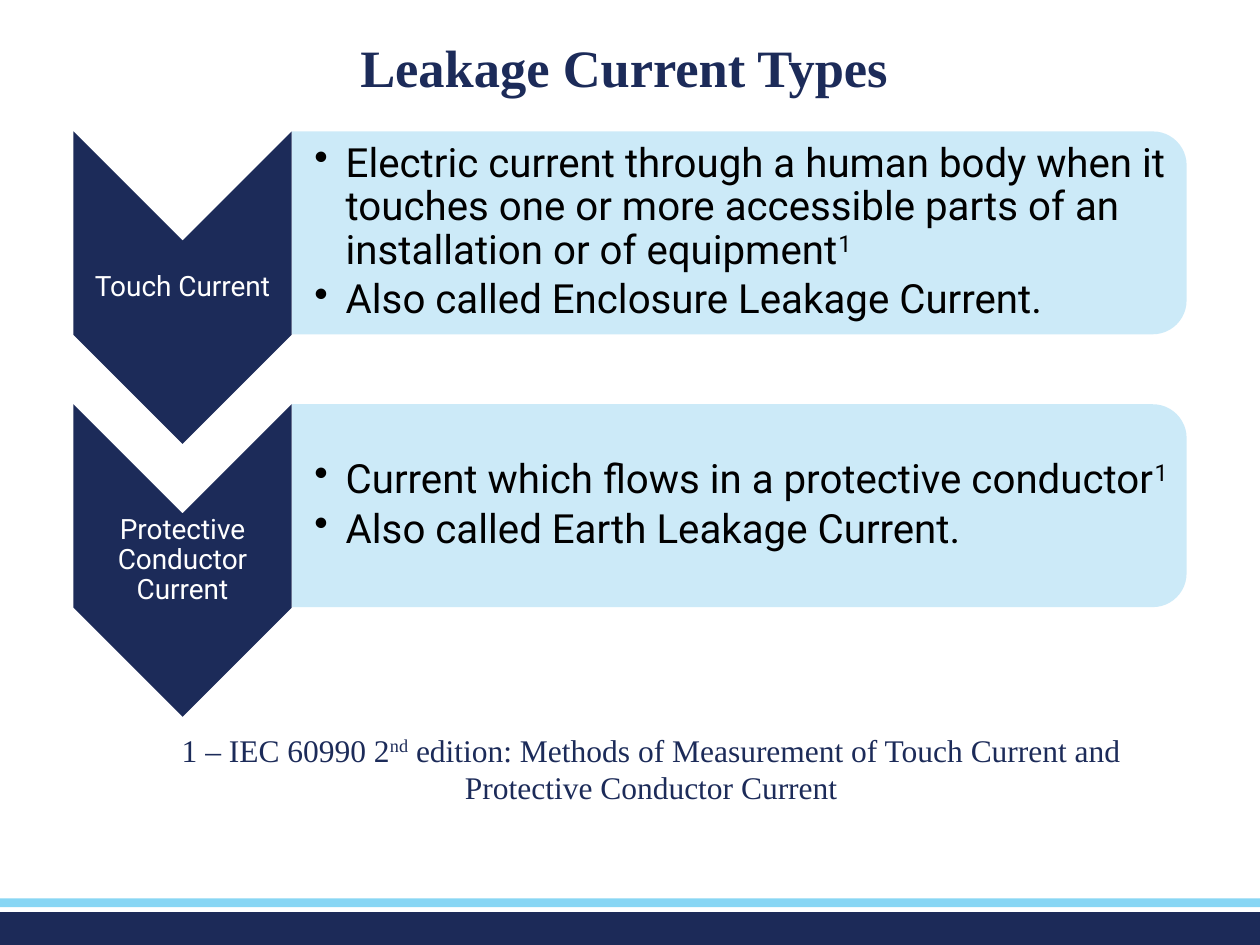
from pptx import Presentation
from pptx.dml.color import RGBColor
from pptx.enum.shapes import MSO_SHAPE
from pptx.enum.text import MSO_ANCHOR, PP_ALIGN
from pptx.util import Cm, Pt
from lxml import etree

RECT = MSO_SHAPE.RECTANGLE
CHEVRON = MSO_SHAPE.CHEVRON
PANEL = MSO_SHAPE.ROUND_2_SAME_RECTANGLE
TOP, MIDDLE, BOTTOM = MSO_ANCHOR.TOP, MSO_ANCHOR.MIDDLE, MSO_ANCHOR.BOTTOM
CENTER = PP_ALIGN.CENTER
NS = "{http://schemas.openxmlformats.org/drawingml/2006/main}"
SERIF, SANS = "Times New Roman", "Roboto"
COLORS = {"bar": "1C2A58", "sky": "88D6F4", "navy": "1C2B59",
          "pale": "C7E8F8", "white": "FFFFFF", "black": "000000"}

deck = Presentation()
deck.slide_width, deck.slide_height = Cm(25.4), Cm(19.05)
slide = deck.slides.add_slide(deck.slide_layouts[6])


def add_shape(kind, left, top, width, height, color, turn=0):
    shape = slide.shapes.add_shape(kind, Cm(left), Cm(top), Cm(width), Cm(height))
    shape.rotation = turn
    shape.shadow.inherit = False
    shape.fill.solid()
    shape.fill.fore_color.rgb = RGBColor.from_string(COLORS[color])
    shape.line.fill.background()
    return shape


def add_text(lines, left, top, width, height, font, size, color,
             anchor=MIDDLE, insets=(0, 0, 0, 0), bold=False,
             bullet=False, spacing=1, after=0):
    """Write one paragraph per line; parts between ^ marks are superscript."""
    box = slide.shapes.add_textbox(Cm(left), Cm(top), Cm(width), Cm(height))
    frame = box.text_frame
    frame.word_wrap = True
    frame.vertical_anchor = anchor
    (frame.margin_left, frame.margin_top,
     frame.margin_right, frame.margin_bottom) = map(Cm, insets)
    for i, line in enumerate(lines):
        para = frame.paragraphs[0] if i == 0 else frame.add_paragraph()
        para.line_spacing = spacing
        para.space_after = Pt(after)
        if bullet:
            props = para._p.get_or_add_pPr()
            props.set("marL", str(Cm(0.63)))
            props.set("indent", str(Cm(-0.63)))
            etree.SubElement(props, NS + "buChar").set("char", "•")
        else:
            para.alignment = CENTER
        para.font.name, para.font.size, para.font.bold = font, Pt(size), bold
        para.font.color.rgb = RGBColor.from_string(COLORS[color])
        for j, part in enumerate(line.split("^")):
            if part:
                run = para.add_run()
                run.text = part
                if j % 2:
                    run._r.get_or_add_rPr().set("baseline", "30000")


# Footer bars
add_shape(RECT, 0, 18.39, 25.4, 0.66, "bar")
add_shape(RECT, 0, 18.11, 25.4, 0.18, "sky")

# Title and source note
add_text(["Leakage Current Types"], 2, 0.5, 21.17, 1.48, SERIF, 30, "navy",
         anchor=BOTTOM, bold=True)
add_text(["1 – IEC 60990 2^nd^ edition: Methods of Measurement of Touch "
          "Current and Protective Conductor Current"],
         2.97, 14.6, 20.32, 1.8, SERIF, 18, "navy",
         anchor=TOP, insets=(0.25, 0.13, 0.25, 0.13))

# Chevron rows, each with a panel of bullets
rows = [
    ("Touch Current",
     ["Electric current through a human body when it touches one or more "
      "accessible parts of an installation or of equipment^1^",
      "Also called Enclosure Leakage Current."]),
    ("Protective Conductor Current",
     ["Current which flows in a protective conductor^1^",
      "Also called Earth Leakage Current."]),
]
PITCH = 5.5
for i, (name, points) in enumerate(rows):
    drop = i * PITCH
    add_shape(CHEVRON, 0.53, 3.6 + drop, 6.3, 4.4, "navy", turn=90)
    add_text([name], 1.48, 4.86 + drop, 4.4, 1.88, SANS, 16, "white",
             insets=(0.03,) * 4, spacing=0.9, after=5.6)
    panel = add_shape(PANEL, 12.86, -4.32 + drop, 4.09, 18.03, "pale", turn=90)
    tint = panel.fill._xPr.find(f"{NS}solidFill/{NS}srgbClr")
    etree.SubElement(tint, NS + "alpha").set("val", "90000")
    add_text(points, 5.89, 2.85 + drop, 17.83, 3.68, SANS, 23, "black",
             insets=(0.45, 0.04, 0.04, 0.04), bullet=True,
             spacing=0.9, after=3.5)

deck.save("out.pptx")
